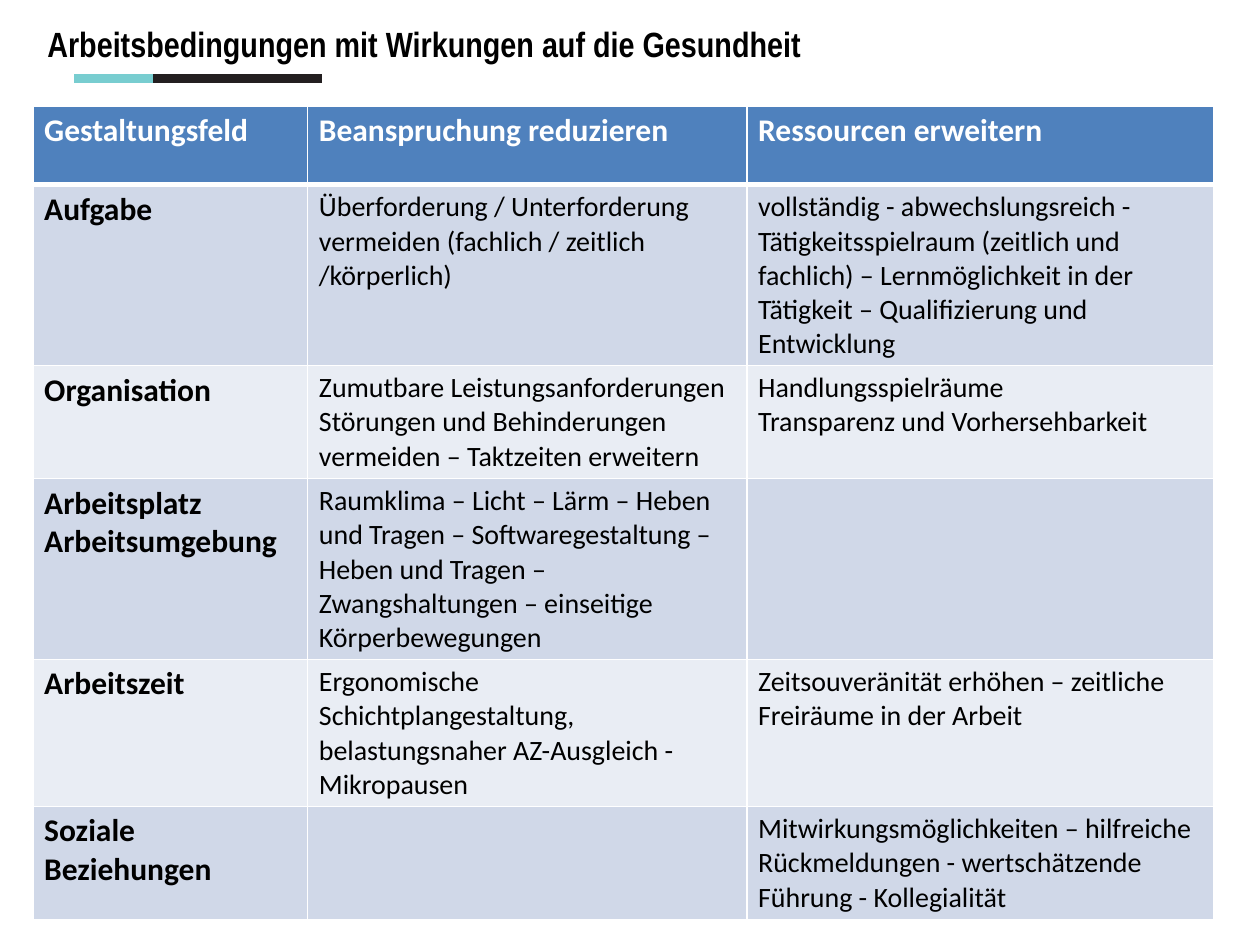
from lxml import etree
from pptx import Presentation
from pptx.dml.color import RGBColor
from pptx.enum.shapes import MSO_CONNECTOR
from pptx.oxml.ns import qn
from pptx.util import Pt

STRAIGHT = MSO_CONNECTOR.STRAIGHT

BLACK = RGBColor(0x00, 0x00, 0x00)
WHITE = RGBColor(0xFF, 0xFF, 0xFF)
TURQUOISE = RGBColor(0x78, 0xCD, 0xD0)
CHARCOAL = RGBColor(0x23, 0x1F, 0x20)
HEADER_BLUE = RGBColor(0x4F, 0x81, 0xBD)
BAND_COLORS = (RGBColor(0xD0, 0xD8, 0xE8), RGBColor(0xE9, 0xED, 0xF4))

TITLE = "Arbeitsbedingungen mit Wirkungen auf die Gesundheit"
COLUMN_WIDTHS = (157, 251, 267)
ROW_HEIGHTS = (45, 103.4, 64.6, 103.4, 84, 64.6)
ROWS = (
    ("Gestaltungsfeld", "Beanspruchung reduzieren", "Ressourcen erweitern"),
    ("Aufgabe",
     "Überforderung / Unterforderung vermeiden (fachlich / zeitlich /körperlich)",
     "vollständig - abwechslungsreich - Tätigkeitsspielraum (zeitlich und "
     "fachlich) – Lernmöglichkeit in der Tätigkeit – Qualifizierung und Entwicklung"),
    ("Organisation",
     "Zumutbare Leistungsanforderungen\n"
     "Störungen und Behinderungen vermeiden – Taktzeiten erweitern",
     "Handlungsspielräume\nTransparenz und Vorhersehbarkeit"),
    ("Arbeitsplatz\nArbeitsumgebung",
     "Raumklima – Licht – Lärm – Heben und Tragen – Softwaregestaltung – "
     "Heben und Tragen – Zwangshaltungen – einseitige Körperbewegungen",
     ""),
    ("Arbeitszeit",
     "Ergonomische Schichtplangestaltung, belastungsnaher AZ-Ausgleich - Mikropausen",
     "Zeitsouveränität erhöhen – zeitliche Freiräume in der Arbeit"),
    ("Soziale Beziehungen",
     "",
     "Mitwirkungsmöglichkeiten – hilfreiche Rückmeldungen - wertschätzende "
     "Führung - Kollegialität"),
)


def set_font(paragraph, name, size, color, bold):
    font = paragraph.font
    font.name = name
    font.size = Pt(size)
    font.bold = bold
    font.color.rgb = color


def add_title(slide):
    box = slide.shapes.add_textbox(Pt(20), Pt(9.4), Pt(690), Pt(32))
    box.text_frame.word_wrap = True
    paragraph = box.text_frame.paragraphs[0]
    paragraph.text = TITLE
    set_font(paragraph, "Arial Narrow", 20, BLACK, True)


def add_rule(slide, left, right, color):
    top = Pt(45)
    rule = slide.shapes.add_connector(STRAIGHT, Pt(left), top, Pt(right), top)
    rule.line.color.rgb = color
    rule.line.width = Pt(5)
    etree.SubElement(rule.element.spPr, qn("a:effectLst"))


def set_borders(cell, **widths):
    """Draw white borders; keys are the sides L, R, T and B in that order."""
    properties = cell._tc.get_or_add_tcPr()
    for side, width in widths.items():
        line = etree.SubElement(properties, qn(f"a:ln{side}"), w=str(Pt(width)))
        fill = etree.SubElement(line, qn("a:solidFill"))
        etree.SubElement(fill, qn("a:srgbClr"), val=str(WHITE))


def fill_cell(cell, text, row, column):
    is_header = row == 0
    is_label = is_header or column == 0
    set_borders(cell, L=1, R=1, T=3 if row == 1 else 1, B=3 if is_header else 1)
    cell.fill.solid()
    cell.fill.fore_color.rgb = HEADER_BLUE if is_header else BAND_COLORS[(row - 1) % 2]
    cell.margin_left = cell.margin_right = Pt(6.5)
    cell.margin_top = cell.margin_bottom = Pt(3.2)
    cell.text_frame.text = text
    for paragraph in cell.text_frame.paragraphs:
        set_font(paragraph, "Calibri", 18 if is_label else 16,
                 WHITE if is_header else BLACK, is_label)


def add_measures_table(slide):
    frame = slide.shapes.add_table(
        len(ROWS), len(COLUMN_WIDTHS), Pt(18.8), Pt(60.5),
        Pt(sum(COLUMN_WIDTHS)), Pt(sum(ROW_HEIGHTS)))
    table = frame.table
    for column, width in zip(table.columns, COLUMN_WIDTHS):
        column.width = Pt(width)
    for row, height in zip(table.rows, ROW_HEIGHTS):
        row.height = Pt(height)
    for row, texts in enumerate(ROWS):
        for column, text in enumerate(texts):
            fill_cell(table.cell(row, column), text, row, column)


def main():
    presentation = Presentation()
    presentation.slide_width = Pt(720)
    presentation.slide_height = Pt(540)
    slide = presentation.slides.add_slide(presentation.slide_layouts[6])
    add_rule(slide, 42.5, 87.5, TURQUOISE)
    add_rule(slide, 87.5, 184, CHARCOAL)
    add_title(slide)
    add_measures_table(slide)
    presentation.save("out.pptx")


if __name__ == "__main__":
    main()
